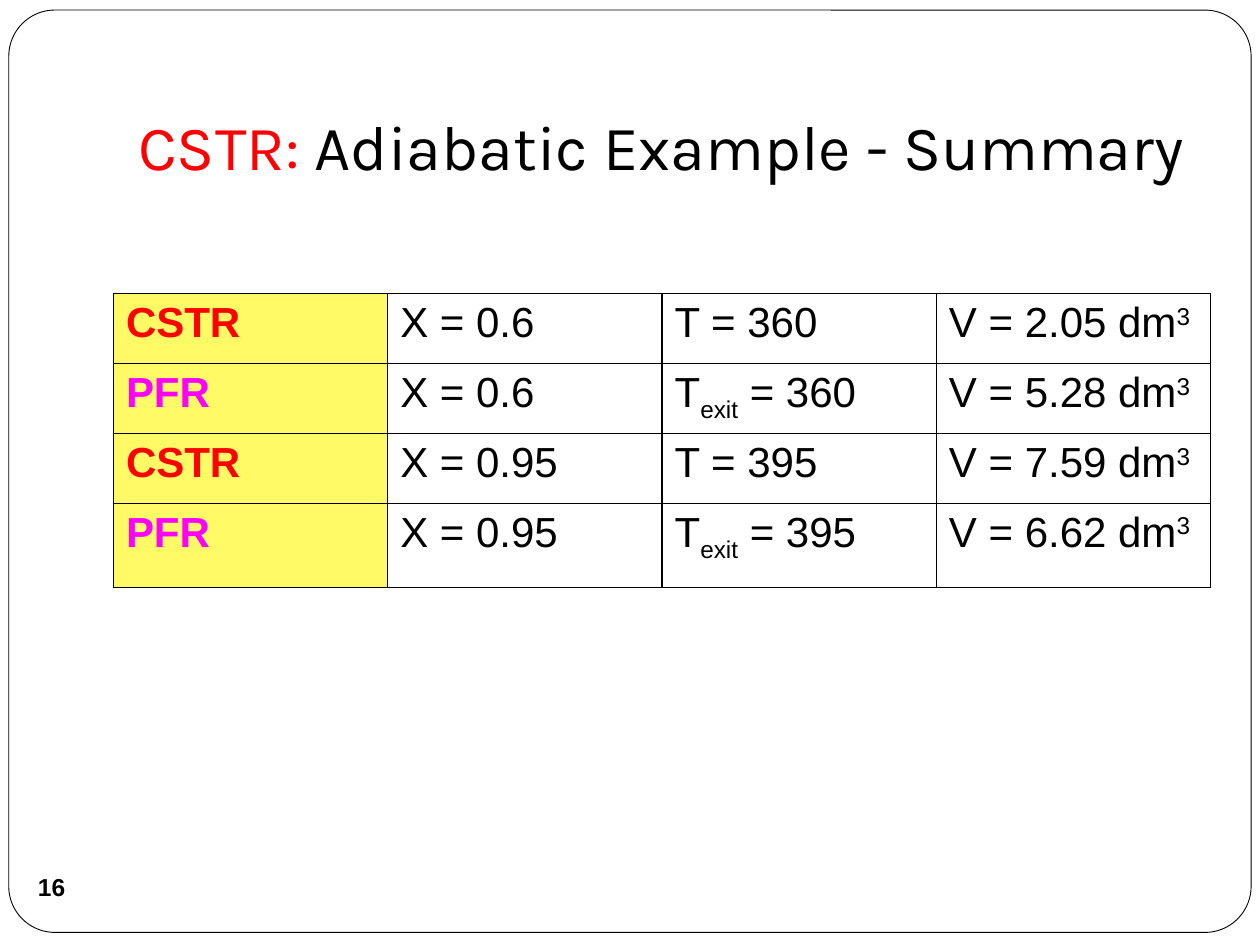
from pptx import Presentation
from pptx.dml.color import RGBColor
from pptx.enum.shapes import MSO_SHAPE
from pptx.enum.text import MSO_ANCHOR, PP_ALIGN
from pptx.oxml import parse_xml
from pptx.oxml.ns import nsdecls
from pptx.util import Inches, Pt

BLACK = RGBColor(0x00, 0x00, 0x00)
WHITE = RGBColor(0xFF, 0xFF, 0xFF)
RED = RGBColor(0xFF, 0x00, 0x00)
MAGENTA = RGBColor(0xFF, 0x00, 0xFF)
YELLOW = RGBColor(0xFF, 0xFA, 0x66)

REACTOR_COLORS = {"CSTR": RED, "PFR": MAGENTA}
SUBSCRIPT, SUPERSCRIPT = -25, 30
RESULTS = [
    ("CSTR", "0.6", "360", "2.05"),
    ("PFR", "0.6", "360", "5.28"),
    ("CSTR", "0.95", "395", "7.59"),
    ("PFR", "0.95", "395", "6.62"),
]


def add_run(p, text, size, color=BLACK, font="Arial", bold=False, baseline=0):
    r = p.add_run()
    r.text = text
    r.font.name = font
    r.font.size = Pt(size)
    r.font.bold = bold
    r.font.color.rgb = color
    if baseline:
        r.font._element.set("baseline", str(baseline * 1000))


def add_frame(s):
    sp = s.shapes.add_shape(MSO_SHAPE.ROUNDED_RECTANGLE, Inches(0.07),
                            Inches(0.08), Inches(9.86), Inches(7.32))
    sp.adjustments[0] = 0.05
    sp.shadow.inherit = False
    sp.fill.solid()
    sp.fill.fore_color.rgb = WHITE
    sp.line.color.rgb = BLACK
    sp.line.width = Pt(0.5)


def add_title(s):
    sp = s.shapes.add_textbox(Inches(1), Inches(0.3), Inches(8.5), Inches(1.25))
    tf = sp.text_frame
    tf.word_wrap = True
    tf.vertical_anchor = MSO_ANCHOR.BOTTOM
    tf.margin_bottom = Inches(0.1)
    p = tf.paragraphs[0]
    add_run(p, "CSTR: ", 36, RED, "Karla")
    add_run(p, "Adiabatic Example - Summary", 36, BLACK, "Karla")


def add_borders(cell):
    tc_pr = cell._tc.get_or_add_tcPr()
    for i, side in enumerate(("lnL", "lnR", "lnT", "lnB")):
        tc_pr.insert(i, parse_xml(
            f'<a:{side} {nsdecls("a")} w="{Pt(1)}"><a:solidFill>'
            f'<a:srgbClr val="{BLACK}"/></a:solidFill></a:{side}>'))


def fill_cell(cell, parts, color=BLACK, bold=False, fill=None):
    if fill is None:
        cell.fill.background()
    else:
        cell.fill.solid()
        cell.fill.fore_color.rgb = fill
    add_borders(cell)
    for text, baseline in parts:
        add_run(cell.text_frame.paragraphs[0], text, 24, color,
                bold=bold, baseline=baseline)


def add_results(s):
    table = s.shapes.add_table(len(RESULTS), 4, Inches(0.9), Inches(2.33),
                               Inches(8.71), Inches(2.33)).table
    table.first_row = False
    table.horz_banding = False
    for row in table.rows:
        row.height = Inches(0.555)
    table.rows[len(RESULTS) - 1].height = Inches(0.67)
    for i, (reactor, conversion, temperature, volume) in enumerate(RESULTS):
        subscript = [("exit", SUBSCRIPT)] if reactor == "PFR" else []
        fill_cell(table.cell(i, 0), [(reactor, 0)],
                  REACTOR_COLORS[reactor], True, YELLOW)
        fill_cell(table.cell(i, 1), [(f"X = {conversion}", 0)])
        fill_cell(table.cell(i, 2),
                  [("T", 0), *subscript, (f" = {temperature}", 0)])
        fill_cell(table.cell(i, 3),
                  [(f"V = {volume} dm", 0), ("3", SUPERSCRIPT)])


def add_slide_number(s):
    sp = s.shapes.add_shape(MSO_SHAPE.OVAL, Inches(0.16), Inches(6.79),
                            Inches(0.5), Inches(0.5))
    sp.shadow.inherit = False
    sp.fill.background()
    sp.line.fill.background()
    tf = sp.text_frame
    tf.word_wrap = False
    tf.vertical_anchor = MSO_ANCHOR.MIDDLE
    tf.margin_left = tf.margin_right = tf.margin_top = tf.margin_bottom = 0
    p = tf.paragraphs[0]
    p.alignment = PP_ALIGN.CENTER
    add_run(p, "16", 14, bold=True)


def main():
    prs = Presentation()
    prs.slide_width = Inches(10)
    prs.slide_height = Inches(7.5)
    s = prs.slides.add_slide(prs.slide_layouts[6])
    add_frame(s)
    add_results(s)
    add_slide_number(s)
    add_title(s)
    prs.save("out.pptx")


if __name__ == "__main__":
    main()
